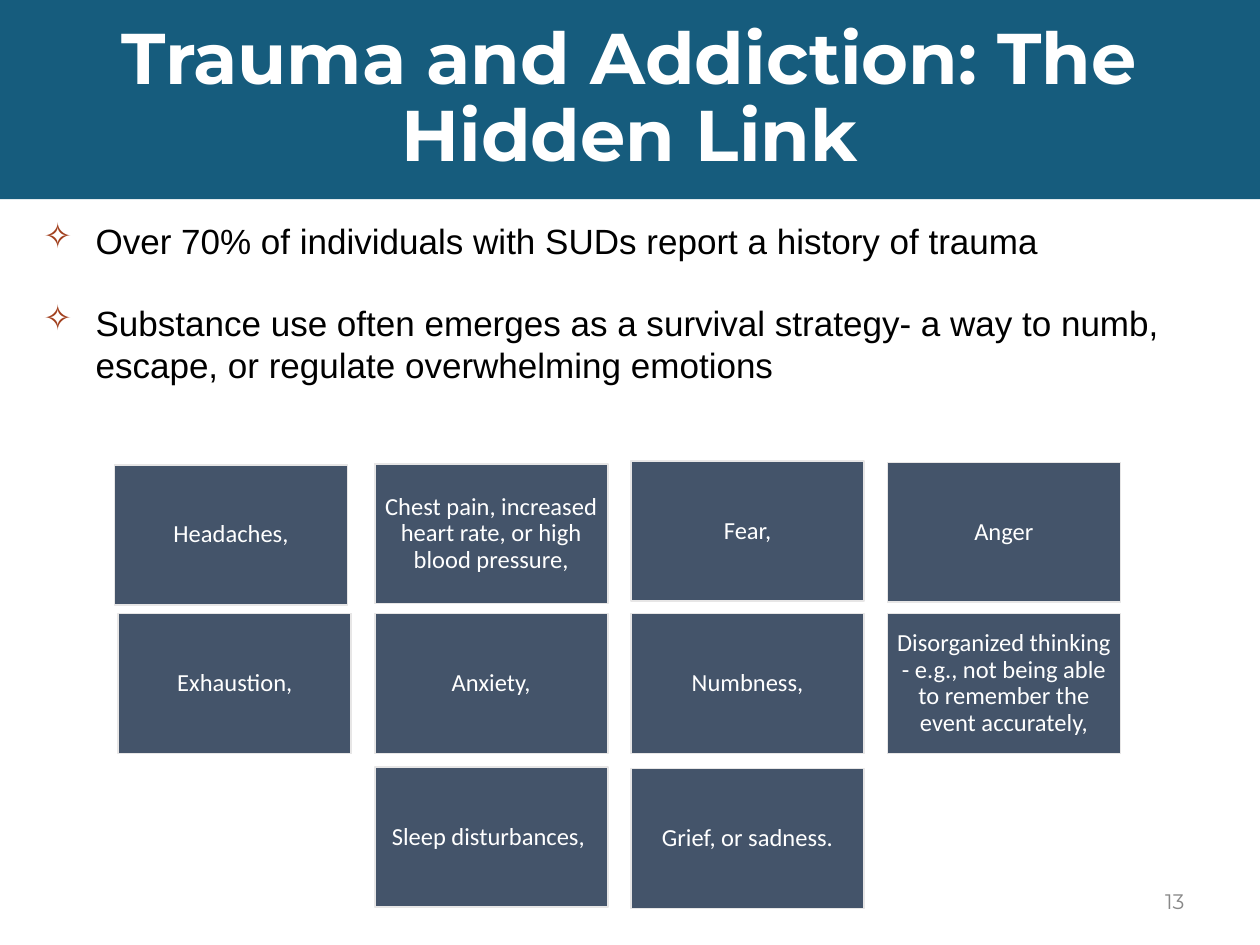
from dataclasses import dataclass

from lxml.etree import SubElement
from pptx import Presentation
from pptx.dml.color import RGBColor
from pptx.enum.shapes import MSO_SHAPE as Preset
from pptx.enum.text import MSO_ANCHOR as Anchor, PP_ALIGN as Align
from pptx.oxml.ns import qn
from pptx.util import Pt

TEAL, SLATE, PALE = "165C7D", "44546A", "E7E6E6"
WHITE, BLACK, GREY, RUST = "FFFFFF", "000000", "888888", "A13F1D"

# Symptom grid, in points
GRID_LEFT, GRID_TOP = 67.6, 262.8
COLUMN_STEP, ROW_STEP = 146.5, 87.84
CARD_WIDTH, CARD_HEIGHT = 133.2, 79.92


@dataclass
class Symptom:
    label: str
    column: int
    row: int
    shift_x: float = 0
    shift_y: float = 0


@dataclass
class Finding:
    statement: str
    top: float
    width: float
    height: float


SYMPTOMS = [
    Symptom("Headaches,", 0, 0, -2.16, 2.88),
    Symptom("Chest pain, increased heart rate, or high blood pressure,", 1, 0, 0, 2.16),
    Symptom("Fear,", 2, 0, 0, 0.72),
    Symptom("Anger", 3, 0, 0, 1.44),
    Symptom("Exhaustion,", 0, 1),
    Symptom("Anxiety,", 1, 1),
    Symptom("Numbness,", 2, 1),
    Symptom("Disorganized thinking - e.g., not being able to remember the event accurately,", 3, 1),
    Symptom("Sleep disturbances, ", 1, 2),
    Symptom("Grief, or sadness.", 2, 2, 0, 0.72),
]

FINDINGS = [
    Finding("Over 70% of individuals with SUDs report a history of trauma", 121.7, 685.4, 159.1),
    Finding("Substance use often emerges as a survival strategy- a way to numb, "
            "escape, or regulate overwhelming emotions", 168.5, 661, 166.3),
]


def color(hex_code: str) -> RGBColor:
    return RGBColor.from_string(hex_code)


def add_bullet(paragraph, mark: str, mark_color: str) -> None:
    properties = paragraph._p.get_or_add_pPr()
    properties.set("marL", str(Pt(36)))
    properties.set("indent", str(Pt(-30)))
    tint = SubElement(properties, qn("a:buClr"))
    SubElement(tint, qn("a:srgbClr"), val=mark_color)
    SubElement(properties, qn("a:buChar"), char=mark)


def write(shape, text: str, *, font: str, size: float, ink: str, bold: bool = False,
          align=Align.LEFT, anchor=Anchor.MIDDLE, spacing: float = 1.0,
          inset: tuple = (7.2, 3.6), bullet: str = "") -> None:
    frame = shape.text_frame
    frame.word_wrap = True
    frame.vertical_anchor = anchor
    frame.margin_left = frame.margin_right = Pt(inset[0])
    frame.margin_top = frame.margin_bottom = Pt(inset[1])
    paragraph = frame.paragraphs[0]
    paragraph.alignment = align
    paragraph.line_spacing = spacing
    if bullet:
        add_bullet(paragraph, bullet, RUST)
    run = paragraph.add_run()
    run.text = text
    run.font.name, run.font.size, run.font.bold = font, Pt(size), bold
    run.font.color.rgb = color(ink)


def add_panel(slide, left: float, top: float, width: float, height: float,
              fill: str, outline: str = ""):
    panel = slide.shapes.add_shape(Preset.RECTANGLE, Pt(left), Pt(top), Pt(width), Pt(height))
    panel.shadow.inherit = False
    panel.fill.solid()
    panel.fill.fore_color.rgb = color(fill)
    if outline:
        panel.line.color.rgb = color(outline)
        panel.line.width = Pt(1)
    else:
        panel.line.fill.background()
    return panel


def add_finding(slide, finding: Finding) -> None:
    box = slide.shapes.add_textbox(Pt(11.5), Pt(finding.top), Pt(finding.width), Pt(finding.height))
    write(box, finding.statement, font="Arial", size=20, ink=BLACK, anchor=Anchor.TOP, bullet="✧")


def add_symptom(slide, symptom: Symptom) -> None:
    left = GRID_LEFT + symptom.column * COLUMN_STEP + symptom.shift_x
    top = GRID_TOP + symptom.row * ROW_STEP + symptom.shift_y
    card = add_panel(slide, left, top, CARD_WIDTH, CARD_HEIGHT, SLATE, PALE)
    write(card, symptom.label, font="Calibri", size=14, ink=WHITE,
          align=Align.CENTER, spacing=0.9, inset=(4.2, 4.2))


def main() -> None:
    deck = Presentation()
    deck.slide_width, deck.slide_height = Pt(720), Pt(540)
    slide = deck.slides.add_slide(deck.slide_layouts[6])

    # Title banner
    banner = add_panel(slide, 0, 0, 720, 113.8, TEAL)
    write(banner, "Trauma and Addiction: The Hidden Link", font="Montserrat", size=41,
          ink=WHITE, bold=True, align=Align.CENTER, spacing=0.9)

    # Key findings
    for finding in FINDINGS:
        add_finding(slide, finding)

    # Page number
    page_number = slide.shapes.add_textbox(Pt(516.2), Pt(500.4), Pt(167.8), Pt(28.8))
    write(page_number, "13", font="Montserrat", size=12, ink=GREY, align=Align.RIGHT)

    # Symptom cards
    for symptom in SYMPTOMS:
        add_symptom(slide, symptom)

    deck.save("out.pptx")


if __name__ == "__main__":
    main()
